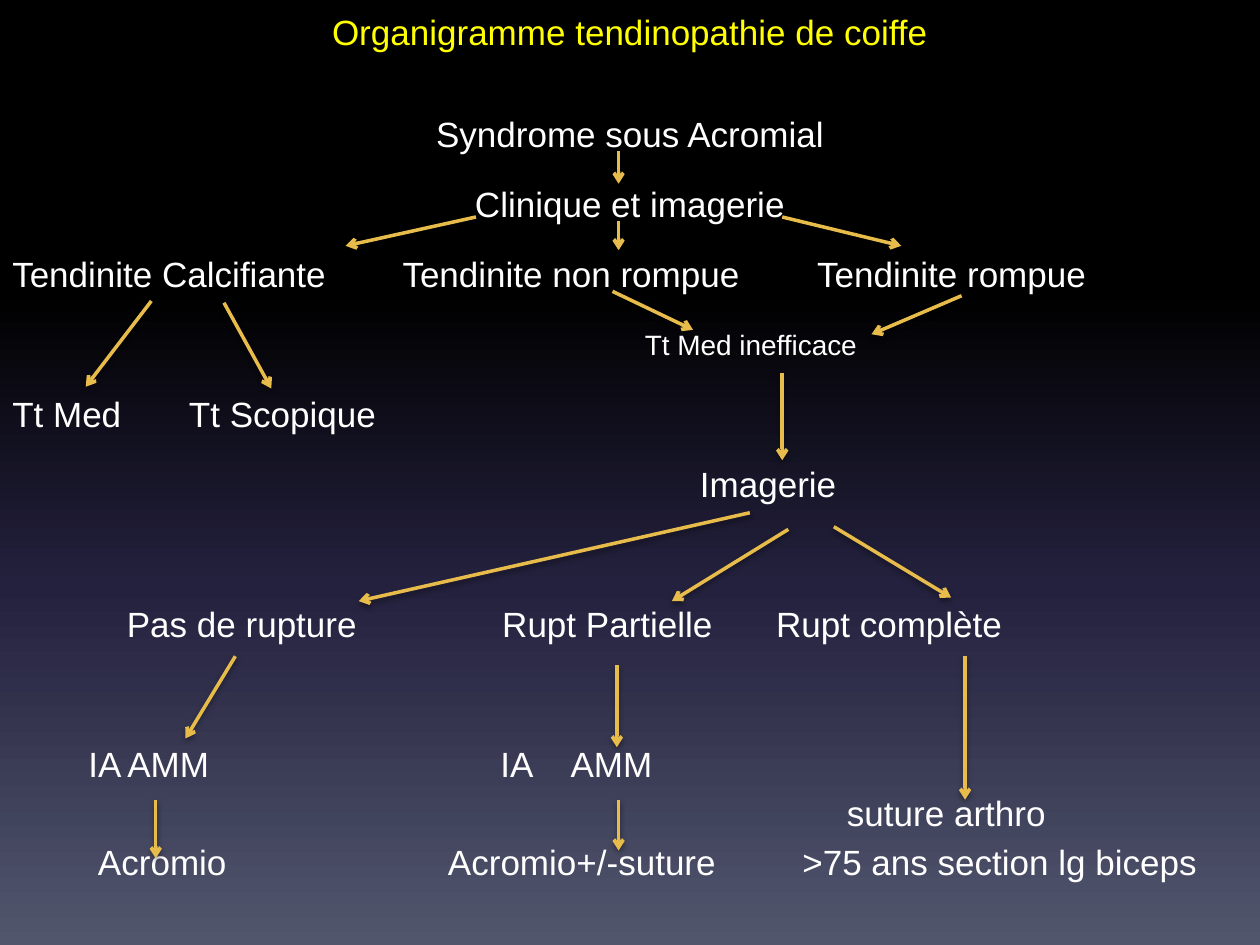
from lxml import etree
from pptx import Presentation
from pptx.dml.color import RGBColor
from pptx.enum.shapes import MSO_CONNECTOR
from pptx.enum.text import MSO_ANCHOR, PP_ALIGN
from pptx.oxml import parse_xml
from pptx.oxml.ns import nsdecls, qn
from pptx.util import Pt

STRAIGHT = MSO_CONNECTOR.STRAIGHT
TOP, MIDDLE = MSO_ANCHOR.TOP, MSO_ANCHOR.MIDDLE
LEFT, CENTER = PP_ALIGN.LEFT, PP_ALIGN.CENTER

TITLE_ONLY = 5
WIDTH, HEIGHT = 720, 540
FONT = "Arial"
COLORS = {"title": "FFFF00", "text": "FFFFFF", "arrow": "E8BC4A", "shadow": "000000"}
BACKGROUND = [(0, "000000"), (31, "000000"), (62, "24213E"), (100, "51566D")]

# Vertical centres of the rows: even steps, then two tighter ones
FIRST_ROW, ROW_STEP, LAST_STEP = 76.5, 40, 28
LABEL_HEIGHT = 24
ROWS = [FIRST_ROW + ROW_STEP * index for index in range(10)]
ROWS += [ROWS[-1] + LAST_STEP, ROWS[-1] + 2 * LAST_STEP]

# Row, left, width, text
LABELS = [
    (2, 7, 184, "Tendinite Calcifiante"),
    (2, 230, 198, "Tendinite non rompue"),
    (2, 467, 160, "Tendinite rompue"),
    (4, 7, 68, "Tt Med"),
    (4, 108, 114, "Tt Scopique"),
    (5, 400, 86, "Imagerie"),
    (7, 72.5, 138, "Pas de rupture"),
    (7, 287, 128, "Rupt Partielle"),
    (7, 443.5, 136, "Rupt complète"),
    (9, 50.5, 76, "IA AMM"),
    (9, 286, 26, "IA"),
    (9, 326, 54, "AMM"),
    (10, 484, 120, "suture arthro"),
    (11, 56, 80, "Acromio"),
    (11, 256, 160, "Acromio+/-suture"),
    (11, 458.5, 234, ">75 ans section lg biceps"),
]

# Start x, start y, end x, end y
ARROWS = [
    # Syndrome to the three kinds of tendinitis
    (353.5, 86.5, 353.5, 105),
    (353.5, 126.5, 353.5, 143),
    (272, 124, 197.5, 140.5),
    (447, 124, 515, 140.5),
    # Treatments
    (86.5, 172, 49, 221),
    (128, 173, 155, 222),
    (350, 166.5, 396, 188.5),
    (549.5, 169, 498, 191),
    # Imaging and its three results
    (447, 213, 447, 263),
    (428.5, 293, 205, 343.5),
    (450.5, 302.5, 384, 343.5),
    (476.5, 301, 543.5, 341.5),
    # Surgery
    (134.5, 375, 106, 422),
    (352.5, 380, 352.5, 427),
    (551.5, 375, 551.5, 457),
    (89, 457, 89, 490.5),
    (353.5, 457, 353.5, 486),
]


def write_text(frame, text, size=20, color="text", align=LEFT, anchor=MIDDLE, top=0):
    frame.word_wrap = True
    frame.vertical_anchor = anchor
    frame.margin_left = frame.margin_right = frame.margin_bottom = 0
    frame.margin_top = Pt(top)
    paragraph = frame.paragraphs[0]
    paragraph.text = text
    paragraph.alignment = align
    paragraph.font.name = FONT
    paragraph.font.size = Pt(size)
    paragraph.font.color.rgb = RGBColor.from_string(COLORS[color])


class FlowSlide:
    def __init__(self, presentation):
        self.slide = presentation.slides.add_slide(presentation.slide_layouts[TITLE_ONLY])

    def background(self, stops):
        fill = self.slide.background.fill
        fill.gradient()
        fill.gradient_angle = 270
        stop_list = next(self.slide.element.iter(qn("a:gsLst")))
        for stop in list(stop_list):
            stop_list.remove(stop)
        for position, color in stops:
            stop = etree.SubElement(stop_list, qn("a:gs"), pos=str(position * 1000))
            etree.SubElement(stop, qn("a:srgbClr"), val=color)

    def title(self, text):
        shape = self.slide.shapes.title
        shape.left, shape.top, shape.width, shape.height = Pt(36), Pt(0), Pt(648), Pt(38)
        write_text(shape.text_frame, text, color="title", align=CENTER, anchor=TOP, top=6)

    def label(self, row, left, width, text, **text_format):
        top = ROWS[row] - LABEL_HEIGHT / 2
        box = self.slide.shapes.add_textbox(Pt(left), Pt(top), Pt(width), Pt(LABEL_HEIGHT))
        write_text(box.text_frame, text, **text_format)

    def arrow(self, *ends):
        connector = self.slide.shapes.add_connector(STRAIGHT, *[Pt(end) for end in ends])
        connector.line.width = Pt(2)
        connector.line.color.rgb = RGBColor.from_string(COLORS["arrow"])
        properties = connector.element.find(qn("p:spPr"))
        etree.SubElement(properties.find(qn("a:ln")), qn("a:tailEnd"), type="arrow")
        properties.append(parse_xml(
            f'<a:effectLst {nsdecls("a")}>'
            f'<a:outerShdw blurRad="{Pt(3.1)}" dist="{Pt(1.6)}" dir="5400000" rotWithShape="0">'
            f'<a:srgbClr val="{COLORS["shadow"]}"><a:alpha val="38000"/></a:srgbClr>'
            '</a:outerShdw></a:effectLst>'))


def main():
    presentation = Presentation()
    presentation.slide_width, presentation.slide_height = Pt(WIDTH), Pt(HEIGHT)
    chart = FlowSlide(presentation)
    chart.background(BACKGROUND)
    chart.title("Organigramme tendinopathie de coiffe")

    # Labels
    for row, text in enumerate(["Syndrome sous Acromial", "Clinique et imagerie"]):
        chart.label(row, 0, WIDTH, text, align=CENTER)
    chart.label(3, 368.5, 130, "Tt Med inefficace", size=16)
    for label in LABELS:
        chart.label(*label)

    # Arrows
    for ends in ARROWS:
        chart.arrow(*ends)

    presentation.save("out.pptx")


if __name__ == "__main__":
    main()
